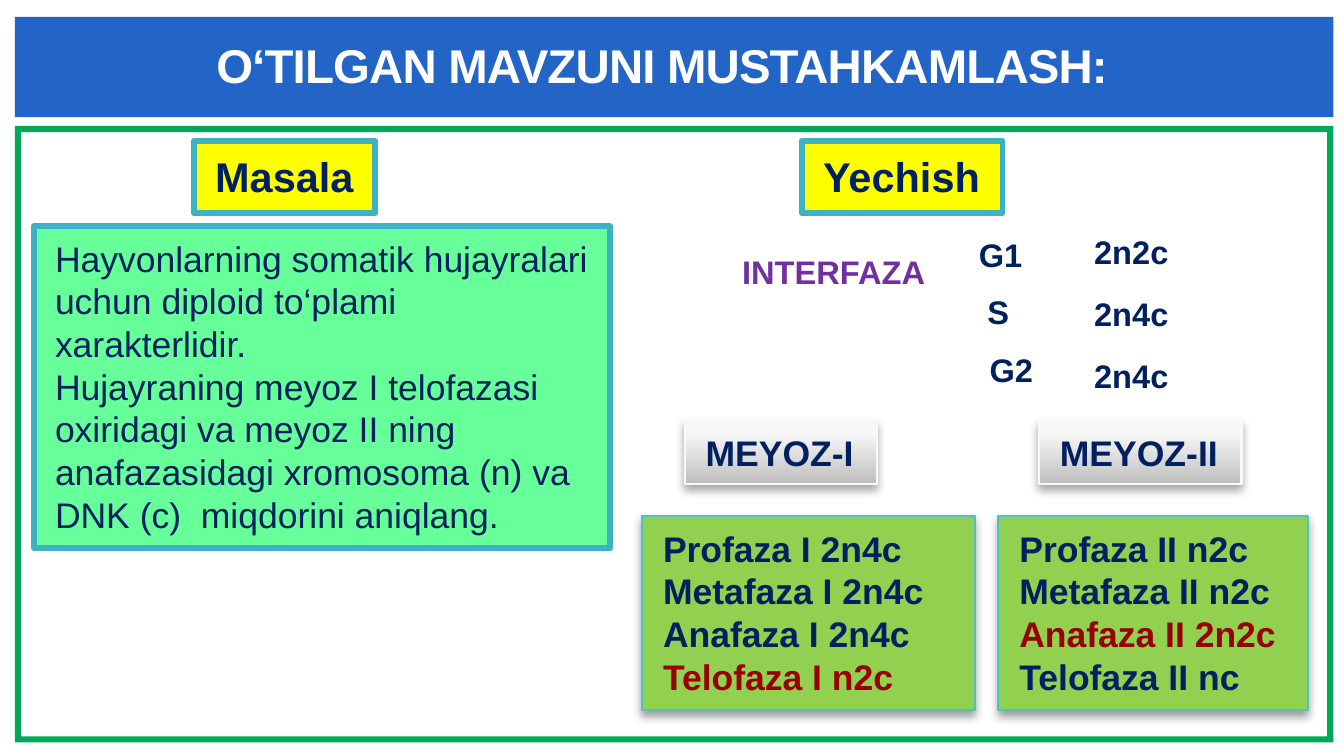
from dataclasses import dataclass
from pptx import Presentation
from pptx.dml.color import RGBColor
from pptx.enum.shapes import MSO_SHAPE
from pptx.enum.text import MSO_ANCHOR, PP_ALIGN
from pptx.oxml.ns import qn
from pptx.util import Inches, Pt
from lxml.etree import SubElement


@dataclass(frozen=True)
class Theme:
    font: str = "Arial"
    blue: str = "2365C7"
    frame: str = "00A859"
    white: str = "FEFEFE"
    navy: str = "002060"
    purple: str = "7030A0"
    red: str = "990000"
    yellow: str = "FFFF00"
    mint: str = "66FF99"
    lime: str = "92D050"
    teal: str = "3CB2C3"
    aqua: str = "4CC1C9"
    pale: str = "F9F9F9"
    grays: tuple = (("BEBEBE", 0), ("F7F7F7", 0.8))
    title: int = 16
    head: int = 14
    body: int = 12
    small: int = 11


T = Theme()


def rgb(code):
    return RGBColor.from_string(code)


def write(shape, lines, size, color=T.navy, bold=True, wrap=True, mark=None):
    """Fill a shape with lines; the line numbered mark turns red."""
    frame = shape.text_frame
    frame.word_wrap = wrap
    frame.vertical_anchor = MSO_ANCHOR.TOP
    frame.text = "\n".join(lines)
    for i, para in enumerate(frame.paragraphs):
        para.alignment = PP_ALIGN.LEFT
        font = para.font
        font.name, font.size, font.bold = T.font, Pt(size), bold
        font.color.rgb = rgb(T.red if i == mark else color)
    return frame


def label(slide, box, text, size, color=T.navy):
    shape = slide.shapes.add_textbox(*map(Inches, box))
    return write(shape, [text], size, color, wrap=False)


def block(slide, box, fill, line=None, width=0, kind=MSO_SHAPE.RECTANGLE):
    shape = slide.shapes.add_shape(kind, *map(Inches, box))
    shape.shadow.inherit = False
    if fill:
        shape.fill.solid()
        shape.fill.fore_color.rgb = rgb(fill)
    if line:
        shape.line.color.rgb = rgb(line)
        shape.line.width = Pt(width)
    else:
        shape.line.fill.background()
    return shape


def shade(shape, drop, alpha):
    """Cast a soft shadow straight down."""
    effects = shape._element.spPr.find(qn("a:effectLst"))
    outer = SubElement(effects, qn("a:outerShdw"), blurRad=str(Pt(3.1)),
                       dist=str(Pt(drop)), dir="5400000", rotWithShape="0")
    color = SubElement(outer, qn("a:srgbClr"), val="000000")
    SubElement(color, qn("a:alpha"), val=str(alpha * 1000))


def banner(slide, box, text):
    x, y, w, h = box
    block(slide, box, T.blue)
    frame = label(slide, (x - 0.02, y + 0.08, w - 0.07, 0.29), text, T.title, T.white)
    frame.word_wrap = True
    frame.vertical_anchor = MSO_ANCHOR.MIDDLE
    para = frame.paragraphs[0]
    para.alignment = PP_ALIGN.CENTER
    para.runs[0]._r.get_or_add_rPr().set("spc", "-25")


def border(slide, box):
    shape = block(slide, box, T.frame, kind=MSO_SHAPE.FRAME)
    shape.adjustments[0] = 0.01


def heading(slide, box, text):
    shape = block(slide, box, T.yellow, T.teal, 2)
    write(shape, [text], T.head, wrap=False)


def task(slide, box, lines):
    x, y, w, h = box
    heading(slide, (x + 0.75, y, 0.85, 0.34), "Masala")
    shape = block(slide, (x, y + 0.4, w, h - 0.4), T.mint, T.teal, 2)
    write(shape, lines, T.body, bold=False)


def stages(slide, box, rows):
    x, y, w, h = box
    label(slide, (x, y + 0.09, 1.08, 0.29), "INTERFAZA", T.small, T.purple)
    for i, (name, shift, value) in enumerate(rows):
        top = y + i * 0.29
        label(slide, (x + 1.11 + shift, top + 0.01 - i * 0.02, 0.41, 0.29), name, T.small)
        label(slide, (x + 1.65, top, 0.55, 0.29), value, T.small)


def phase(slide, box, name, inset, width, lines, mark):
    """A gray name tag above a list of phases."""
    x, y, w, h = box
    card = block(slide, (x, y + 0.45, w, h - 0.45), T.lime, T.aqua, 0.75)
    shade(card, 1.6, 38)
    write(card, lines, T.body, mark=mark)
    tag = block(slide, (x + inset, y, width, 0.3), None, T.pale, 0.75)
    tag.fill.gradient()
    tag.fill.gradient_angle = 90
    for stop, (color, place) in zip(tag.fill.gradient_stops, T.grays):
        stop.color.rgb = rgb(color)
        stop.position = place
    shade(tag, 1.8, 35)
    write(tag, [name], T.body, wrap=False)


def main():
    deck = Presentation()
    # Wide screen, 16 to 9
    deck.slide_width = Inches(6.3)
    deck.slide_height = deck.slide_width * 9 // 16
    slide = deck.slides.add_slide(deck.slide_layouts[6])

    # Backdrop and title
    border(slide, (0.07, 0.59, 6.18, 2.89))
    banner(slide, (0.07, 0.08, 6.18, 0.47), "O‘TILGAN MAVZUNI MUSTAHKAMLASH:")

    # Problem
    task(slide, (0.16, 0.66, 2.7, 1.91), [
        "Hayvonlarning somatik hujayralari uchun diploid to‘plami xarakterlidir.",
        "Hujayraning meyoz I telofazasi oxiridagi va meyoz II ning "
        "anafazasidagi xromosoma (n) va DNK (c)  miqdorini aniqlang."])

    # Solution
    heading(slide, (3.76, 0.66, 0.94, 0.34), "Yechish")
    stages(slide, (3.38, 1.04, 2.2, 0.87),
           [("G1", 0, "2n2c"), ("S", 0.04, "2n4c"), ("G2", 0.05, "2n4c")])
    phase(slide, (3.01, 1.97, 1.56, 1.36), "MEYOZ-I", 0.2, 0.9,
          ["Profaza I 2n4c", "Metafaza I 2n4c", "Anafaza I 2n4c", "Telofaza I n2c"], 3)
    phase(slide, (4.68, 1.97, 1.45, 1.36), "MEYOZ-II", 0.19, 0.95,
          ["Profaza II n2c", "Metafaza II n2c", "Anafaza II 2n2c", "Telofaza II nc"], 2)

    deck.save("out.pptx")


if __name__ == "__main__":
    main()
